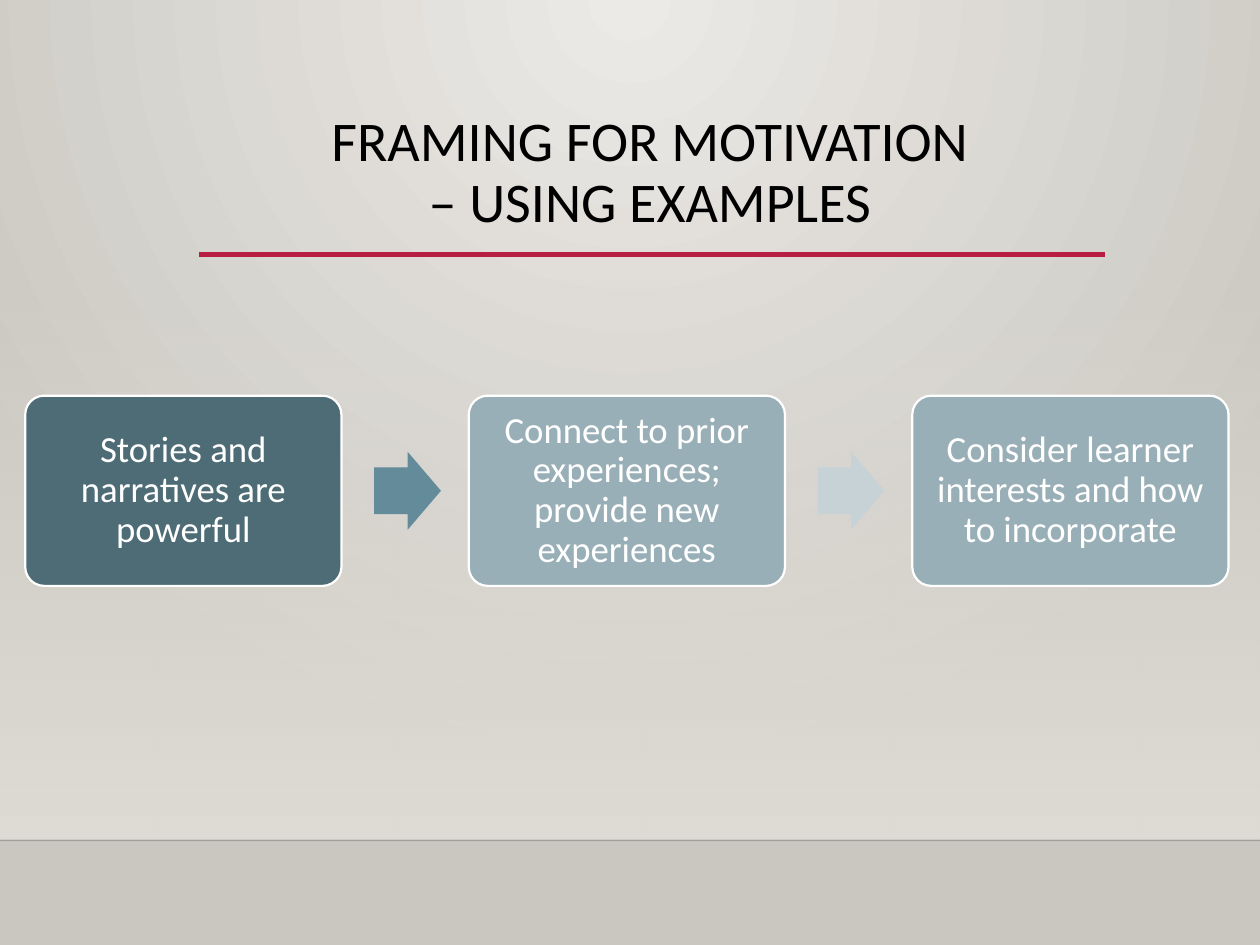
import pptx
import pptx.dml.color
import pptx.enum.shapes
import pptx.enum.text
import pptx.oxml
import pptx.oxml.ns
import pptx.util
from pptx.util import Inches

RGBColor = pptx.dml.color.RGBColor
SHAPE = pptx.enum.shapes.MSO_SHAPE
ANCHOR = pptx.enum.text.MSO_ANCHOR
qn = pptx.oxml.ns.qn

BLACK = RGBColor(0x00, 0x00, 0x00)
WHITE = RGBColor(0xFF, 0xFF, 0xFF)
RED = RGBColor(0xB7, 0x1E, 0x42)
GLOW = RGBColor(0xEC, 0xEA, 0xE7)
STONE = RGBColor(0xCA, 0xC7, 0xC1)
SAND = RGBColor(0xDF, 0xDB, 0xD5)
DARK_TEAL = RGBColor(0x4D, 0x6C, 0x76)
TEAL = RGBColor(0x63, 0x8B, 0x99)
PALE_TEAL = RGBColor(0x99, 0xAF, 0xB7)
MIST = RGBColor(0xC7, 0xD2, 0xD7)

STEPS = [
    ("Stories and narratives are powerful", DARK_TEAL, TEAL),
    ("Connect to prior experiences; provide new experiences", PALE_TEAL, MIST),
    ("Consider learner interests and how to incorporate", PALE_TEAL, None),
]
STEP_LEFT, STEP_TOP, STEP_W, STEP_H, STEP_PITCH = 0.2, 3.14, 2.51, 1.51, 3.52
ARROW_OFFSET, ARROW_W, ARROW_H = 2.77, 0.53, 0.62


def add_xml(parent, tag, **attrs):
    child = pptx.oxml.parse_xml(f"<a:{tag} {pptx.oxml.ns.nsdecls('a')}/>")
    for key, value in attrs.items():
        child.set(key, value)
    parent.append(child)
    return child


def set_alpha(parent, percent):
    """Make the first colour inside parent partly transparent."""
    add_xml(next(parent.iter(qn("a:srgbClr"))), "alpha", val=str(percent * 1000))


class SlideBuilder:
    font = "Calibri"
    line_spacing = 0.9

    def __init__(self, s):
        self.s = s

    def gradient(self, fill, first, last):
        fill.gradient()
        for stop, color in zip(fill.gradient_stops, (first, last)):
            stop.color.rgb = color

    def background(self, center, edge):
        """Radial gradient that spreads from the top centre."""
        self.gradient(self.s.background.fill, center, edge)
        grad = next(self.s._element.iter(qn("a:gradFill")))
        grad.remove(grad.find(qn("a:lin")))
        radial = add_xml(grad, "path", path="circle")
        add_xml(radial, "fillToRect", l="43000", t="0", r="43000", b="100000")

    def shape(self, kind, x, y, w, h, color=None, adjust=()):
        sp = self.s.shapes.add_shape(kind, Inches(x), Inches(y), Inches(w), Inches(h))
        sp.shadow.inherit = False
        sp.line.fill.background()
        if color is not None:
            sp.fill.solid()
            sp.fill.fore_color.rgb = color
        for i, value in enumerate(adjust):
            sp.adjustments[i] = value
        return sp

    def fade(self, x, y, w, h, color):
        """Rectangle that goes from clear at the top to solid at the bottom."""
        sp = self.shape(SHAPE.RECTANGLE, x, y, w, h)
        self.gradient(sp.fill, color, color)
        sp.fill.gradient_angle = 270
        set_alpha(sp._element.spPr, 0)

    def rule(self, x1, x2, y, color, width, alpha=None):
        line = self.s.shapes.add_connector(
            pptx.enum.shapes.MSO_CONNECTOR.STRAIGHT,
            Inches(x1), Inches(y), Inches(x2), Inches(y))
        line.line.color.rgb = color
        line.line.width = pptx.util.Pt(width)
        add_xml(line._element.spPr, "effectLst")
        if alpha is not None:
            set_alpha(line._element.spPr, alpha)

    def set_text(self, tf, text, size, color, **frame):
        for name, value in {"word_wrap": True, **frame}.items():
            setattr(tf, name, value)
        p = tf.paragraphs[0]
        p.text = text
        p.alignment = pptx.enum.text.PP_ALIGN.CENTER
        p.line_spacing = self.line_spacing
        for r in p.runs:
            for name, value in {"name": self.font, "size": pptx.util.Pt(size)}.items():
                setattr(r.font, name, value)
            r.font.color.rgb = color

    def title(self, text, x, y, w, h):
        box = self.s.shapes.add_textbox(Inches(x), Inches(y), Inches(w), Inches(h))
        self.set_text(box.text_frame, text, 32, BLACK, vertical_anchor=ANCHOR.TOP)

    def step(self, text, x, y, w, h, color):
        sp = self.shape(SHAPE.ROUNDED_RECTANGLE, x, y, w, h, color, [0.1])
        sp.line.color.rgb = WHITE
        sp.line.width = pptx.util.Pt(1.25)
        margins = {f"margin_{side}": Inches(0.09)
                   for side in ("left", "top", "right", "bottom")}
        self.set_text(sp.text_frame, text, 21, WHITE,
                      vertical_anchor=ANCHOR.MIDDLE, **margins)


def main():
    prs = pptx.Presentation()
    prs.slide_width, prs.slide_height = Inches(10), Inches(7.5)
    slide = SlideBuilder(prs.slides.add_slide(prs.slide_layouts[6]))

    slide.background(GLOW, STONE)
    slide.fade(0, 2.2, 10, 4.46, SAND)
    slide.rule(0, 10, 6.67, BLACK, 1, alpha=20)
    slide.rule(1.58, 8.77, 2.02, RED, 2.5)
    slide.title("FRAMING FOR MOTIVATION\v– USING EXAMPLES", 0.91, 0.85, 8.5, 1.48)

    arrow_top = STEP_TOP + (STEP_H - ARROW_H) / 2
    for i, (text, color, arrow_color) in enumerate(STEPS):
        x = STEP_LEFT + i * STEP_PITCH
        slide.step(text, x, STEP_TOP, STEP_W, STEP_H, color)
        if arrow_color is not None:
            slide.shape(SHAPE.RIGHT_ARROW, x + ARROW_OFFSET, arrow_top,
                        ARROW_W, ARROW_H, arrow_color, [0.6, 0.5])

    prs.save("out.pptx")


if __name__ == "__main__":
    main()
